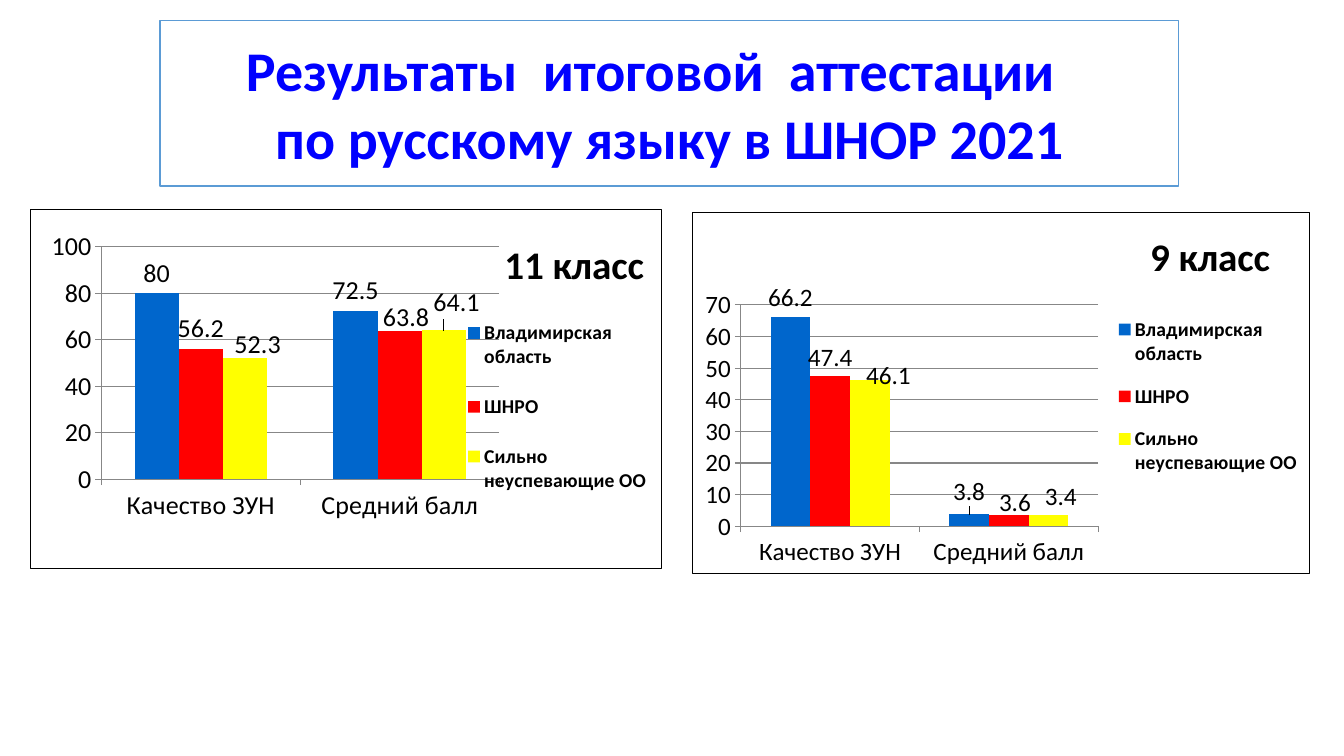
from dataclasses import dataclass

from lxml.etree import SubElement
from pptx import Presentation
from pptx.chart.chart import Chart
from pptx.chart.data import CategoryChartData
from pptx.dml.color import RGBColor
from pptx.enum.chart import XL_CHART_TYPE, XL_LABEL_POSITION, XL_LEGEND_POSITION, XL_TICK_MARK
from pptx.enum.text import MSO_ANCHOR, MSO_AUTO_SIZE, PP_ALIGN
from pptx.oxml import parse_xml
from pptx.oxml.ns import nsdecls, qn
from pptx.slide import Slide
from pptx.util import Inches, Pt

WHITE = RGBColor(0xFF, 0xFF, 0xFF)
BLACK = RGBColor(0x00, 0x00, 0x00)
TITLE_BLUE = RGBColor(0x00, 0x00, 0xFF)
FRAME_BLUE = RGBColor(0x5B, 0x9B, 0xD5)
GRID_GRAY = RGBColor(0x87, 0x87, 0x87)
SERIES_COLORS = (RGBColor(0x00, 0x66, 0xCC), RGBColor(0xFF, 0x00, 0x00), RGBColor(0xFF, 0xFF, 0x00))

FONT = "Calibri"
SLIDE_W, SLIDE_H = Inches(13.33), Inches(7.5)
CATEGORIES = ("Качество ЗУН", "Средний балл")
SERIES = ("Владимирская область", "ШНРО", "Сильно неуспевающие ОО")
TITLE_LINES = ("Результаты  итоговой  аттестации", "по русскому языку в ШНОР 2021")
LINE_SHIFT = Inches(0.38)


@dataclass(frozen=True)
class Box:
    """Place and size as shares of the slide or of the chart."""
    x: float
    y: float
    w: float
    h: float

    def on_slide(self) -> tuple[int, int, int, int]:
        return (int(self.x * SLIDE_W), int(self.y * SLIDE_H),
                int(self.w * SLIDE_W), int(self.h * SLIDE_H))


@dataclass(frozen=True)
class ClassResults:
    name: str
    box: Box
    values: tuple[tuple[float, float], ...]
    font_size: float
    label_size: float
    axis_max: int
    axis_step: int
    plot: Box
    legend: Box
    title_at: tuple[float, float]
    label_shifts: dict[tuple[int, int], tuple[float, float]]  # (series, category): (dx, dy)


TITLE_BOX = Box(0.119, 0.027, 0.758, 0.219)
RESULTS = (
    ClassResults("11 класс", Box(0.0225, 0.276, 0.47, 0.477),
                 ((80, 72.5), (56.2, 63.8), (52.3, 64.1)), 18.6, 18.6, 100, 20,
                 Box(0.112, 0.105, 0.631, 0.646), Box(0.68, 0.24, 0.31, 0.62), (0.74, 0.06),
                 {(1, 1): (0.01, 0.02), (2, 0): (0.02, 0.02), (2, 1): (0.02, -0.02)}),
    ClassResults("9 класс", Box(0.515, 0.28, 0.46, 0.479),
                 ((66.2, 3.8), (47.4, 3.6), (46.1, 3.4)), 17.9, 18, 70, 10,
                 Box(0.078, 0.257, 0.579, 0.613), Box(0.68, 0.24, 0.31, 0.54), (0.73, 0.03),
                 {(0, 1): (0, -0.01), (1, 1): (0.01, 0.02),
                  (2, 0): (0.03, 0.04), (2, 1): (0.02, 0)}),
)


def set_attrs(obj, values: dict) -> None:
    for name, value in values.items():
        setattr(obj, name, value)


def set_layout(element, index: int, values: dict) -> None:
    """Give a chart part a manual layout as its child number index."""
    for old in element.findall(qn("c:layout")):
        element.remove(old)
    layout = parse_xml(f"<c:layout {nsdecls('c')}><c:manualLayout/></c:layout>")
    for tag, value in values.items():
        SubElement(layout[0], qn(f"c:{tag}")).set("val", str(value))
    element.insert(index, layout)


def box_layout(box: Box) -> dict:
    return {"xMode": "edge", "yMode": "edge", "x": box.x, "y": box.y, "w": box.w, "h": box.h}


def add_title(slide: Slide) -> None:
    sp = slide.shapes.title
    set_attrs(sp, dict(zip(("left", "top", "width", "height"), TITLE_BOX.on_slide())))
    outline = parse_xml(f'<a:prstGeom {nsdecls("a")} prst="roundRect"><a:avLst/></a:prstGeom>')
    sp.element.spPr.insert(1, outline)
    sp.fill.solid()
    sp.fill.fore_color.rgb = WHITE
    sp.line.color.rgb = FRAME_BLUE
    sp.line.width = Pt(1)
    tf = sp.text_frame
    tf.text = "\n".join(TITLE_LINES)
    set_attrs(tf, {"word_wrap": True, "auto_size": MSO_AUTO_SIZE.NONE,
                   "vertical_anchor": MSO_ANCHOR.MIDDLE,
                   "margin_right": Inches(0.1) + LINE_SHIFT})
    for p in tf.paragraphs:
        set_attrs(p, {"alignment": PP_ALIGN.CENTER, "line_spacing": 1.0, "space_before": Pt(0)})
        for r in p.runs:
            set_attrs(r.font, {"name": FONT, "size": Pt(40), "bold": True})
            r.font.color.rgb = TITLE_BLUE
    tf.paragraphs[1]._p.get_or_add_pPr().set("marL", str(LINE_SHIFT))


def format_axes(chart: Chart, results: ClassResults) -> None:
    set_attrs(chart.value_axis, {"minimum_scale": 0, "maximum_scale": results.axis_max,
                                 "major_unit": results.axis_step, "has_major_gridlines": True})
    lines = [chart.value_axis.major_gridlines.format.line]
    for axis in (chart.category_axis, chart.value_axis):
        set_attrs(axis, {"major_tick_mark": XL_TICK_MARK.OUTSIDE,
                         "minor_tick_mark": XL_TICK_MARK.NONE})
        lines.append(axis.format.line)
    for line in lines:
        line.color.rgb = GRID_GRAY
        line.width = Pt(0.75)


def format_series(chart: Chart, results: ClassResults) -> None:
    label_font = {"name": FONT, "size": Pt(results.label_size), "bold": False}
    for s, (series, color) in enumerate(zip(chart.plots[0].series, SERIES_COLORS)):
        series.format.fill.solid()
        series.format.fill.fore_color.rgb = color
        series.invert_if_negative = False
        labels = series.data_labels
        set_attrs(labels, {"show_value": True, "position": XL_LABEL_POSITION.OUTSIDE_END})
        set_attrs(labels.font, label_font)
        for c in range(len(CATEGORIES)):
            if (s, c) not in results.label_shifts:
                continue
            label = series.points[c].data_label
            label.position = XL_LABEL_POSITION.OUTSIDE_END
            set_attrs(label.font, label_font)
            dx, dy = results.label_shifts[s, c]
            element = series._element.xpath(f'c:dLbls/c:dLbl[c:idx/@val="{c}"]')[0]
            set_layout(element, 1, {"x": dx, "y": dy})


def add_results_chart(slide: Slide, results: ClassResults) -> None:
    data = CategoryChartData()
    data.categories = CATEGORIES
    for name, values in zip(SERIES, results.values):
        data.add_series(name, values)
    chart = slide.shapes.add_chart(XL_CHART_TYPE.COLUMN_CLUSTERED,
                                   *results.box.on_slide(), data).chart
    set_attrs(chart.font, {"name": FONT, "size": Pt(results.font_size)})
    chart.font.color.rgb = BLACK
    set_attrs(chart.plots[0], {"gap_width": 150, "overlap": 0, "vary_by_categories": False})
    format_axes(chart, results)
    format_series(chart, results)

    chart.has_title = True
    tf = chart.chart_title.text_frame
    tf.text = results.name
    font = tf.paragraphs[0].runs[0].font
    set_attrs(font, {"name": FONT, "size": Pt(28), "bold": True})
    font.color.rgb = BLACK
    x, y = results.title_at
    set_layout(chart.element.xpath("c:chart/c:title")[0], 1,
               {"xMode": "edge", "yMode": "edge", "x": x, "y": y})

    chart.has_legend = True
    set_attrs(chart.legend, {"position": XL_LEGEND_POSITION.RIGHT, "include_in_layout": False})
    set_attrs(chart.legend.font, {"name": FONT, "size": Pt(14), "bold": True})
    set_layout(chart.element.xpath("c:chart/c:legend")[0], 1, box_layout(results.legend))
    set_layout(chart.element.xpath("c:chart/c:plotArea")[0], 0,
               {"layoutTarget": "inner", **box_layout(results.plot)})

    border = parse_xml(f'<c:spPr {nsdecls("c", "a")}><a:noFill/><a:ln w="{Pt(0.75)}"><a:solidFill>'
                       f'<a:srgbClr val="{BLACK}"/></a:solidFill></a:ln></c:spPr>')
    chart.element.xpath("c:chart")[0].addnext(border)


def main() -> None:
    prs = Presentation()
    prs.slide_width, prs.slide_height = SLIDE_W, SLIDE_H
    slide = prs.slides.add_slide(prs.slide_layouts[5])
    add_title(slide)
    for results in RESULTS:
        add_results_chart(slide, results)
    prs.save("out.pptx")


if __name__ == "__main__":
    main()
